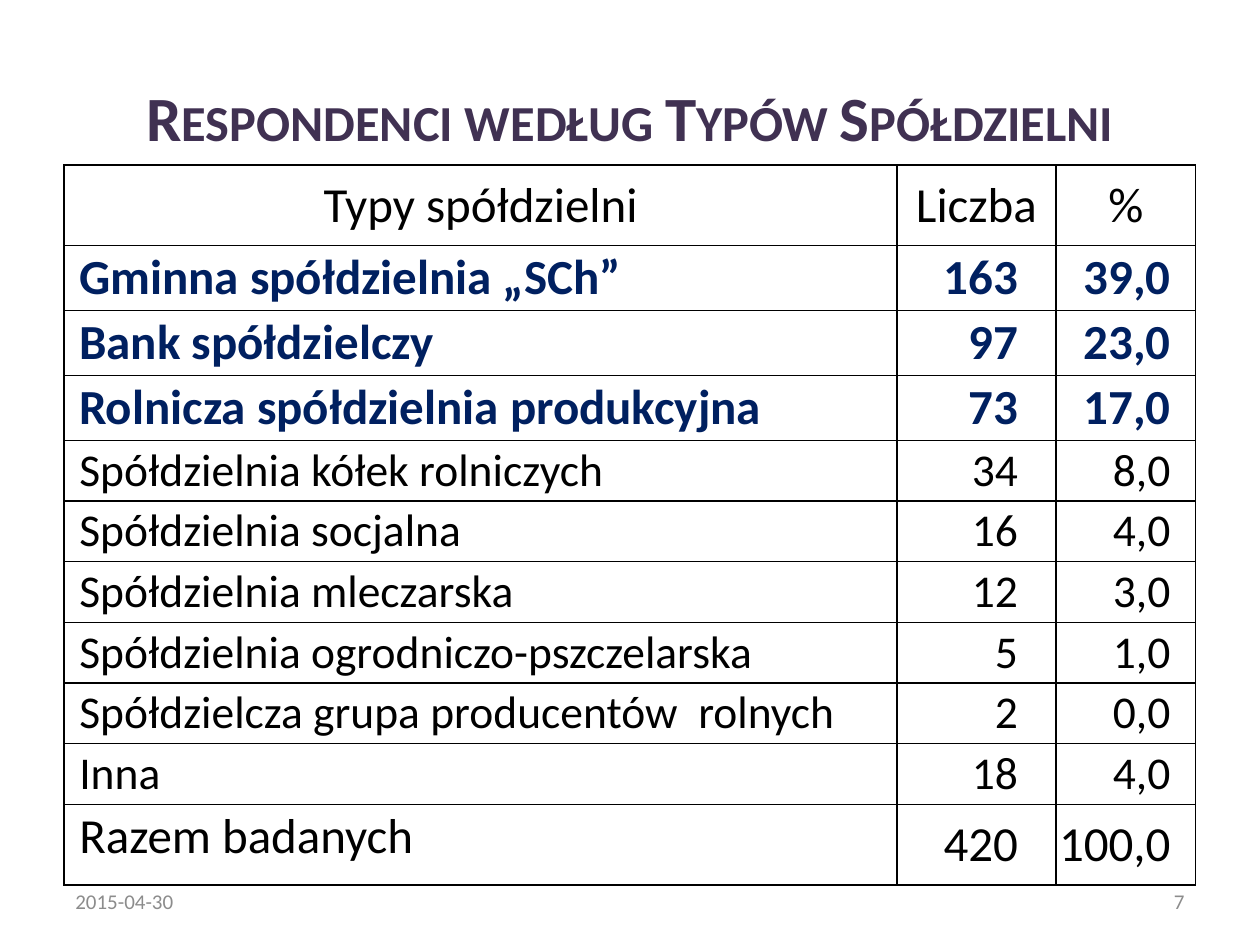
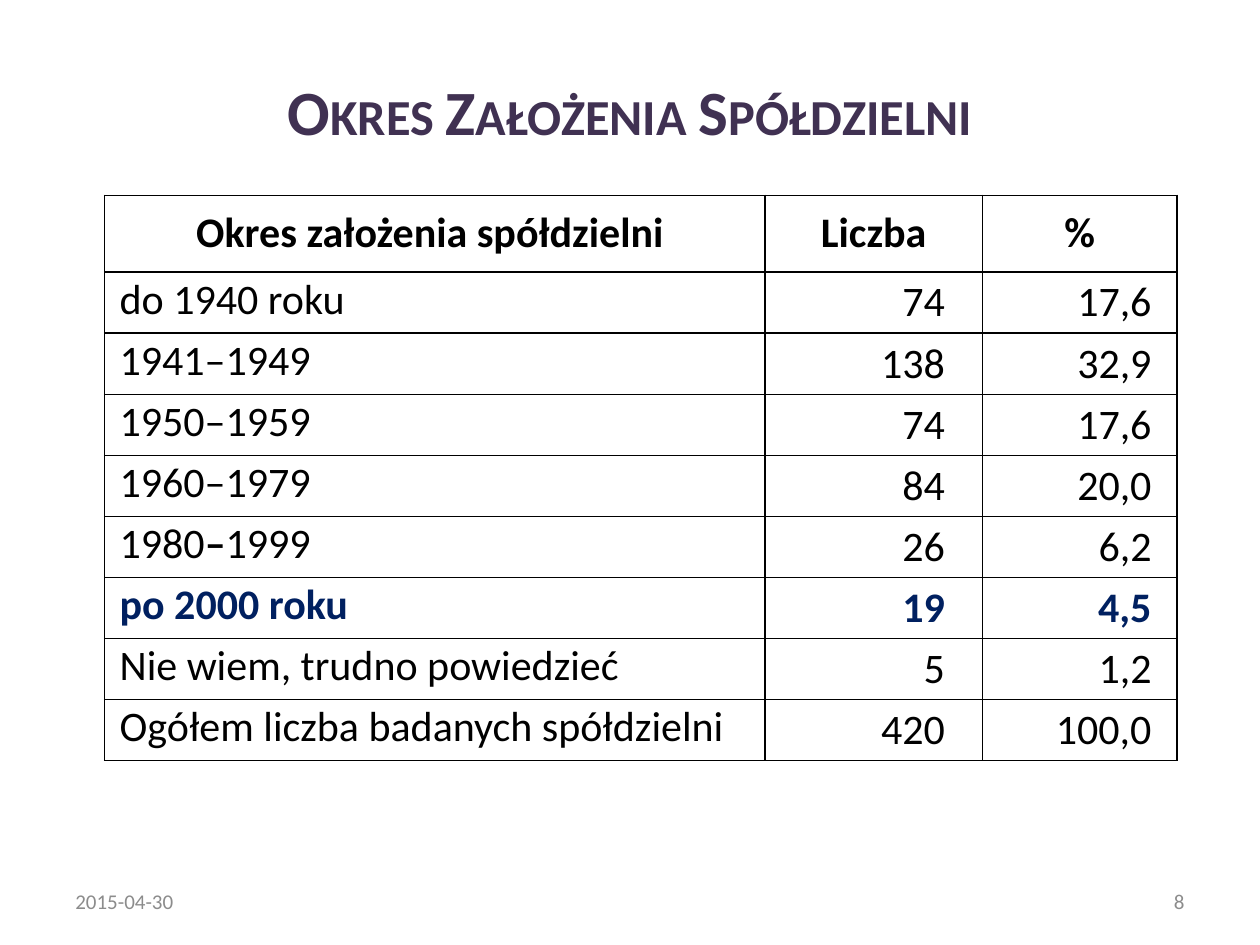
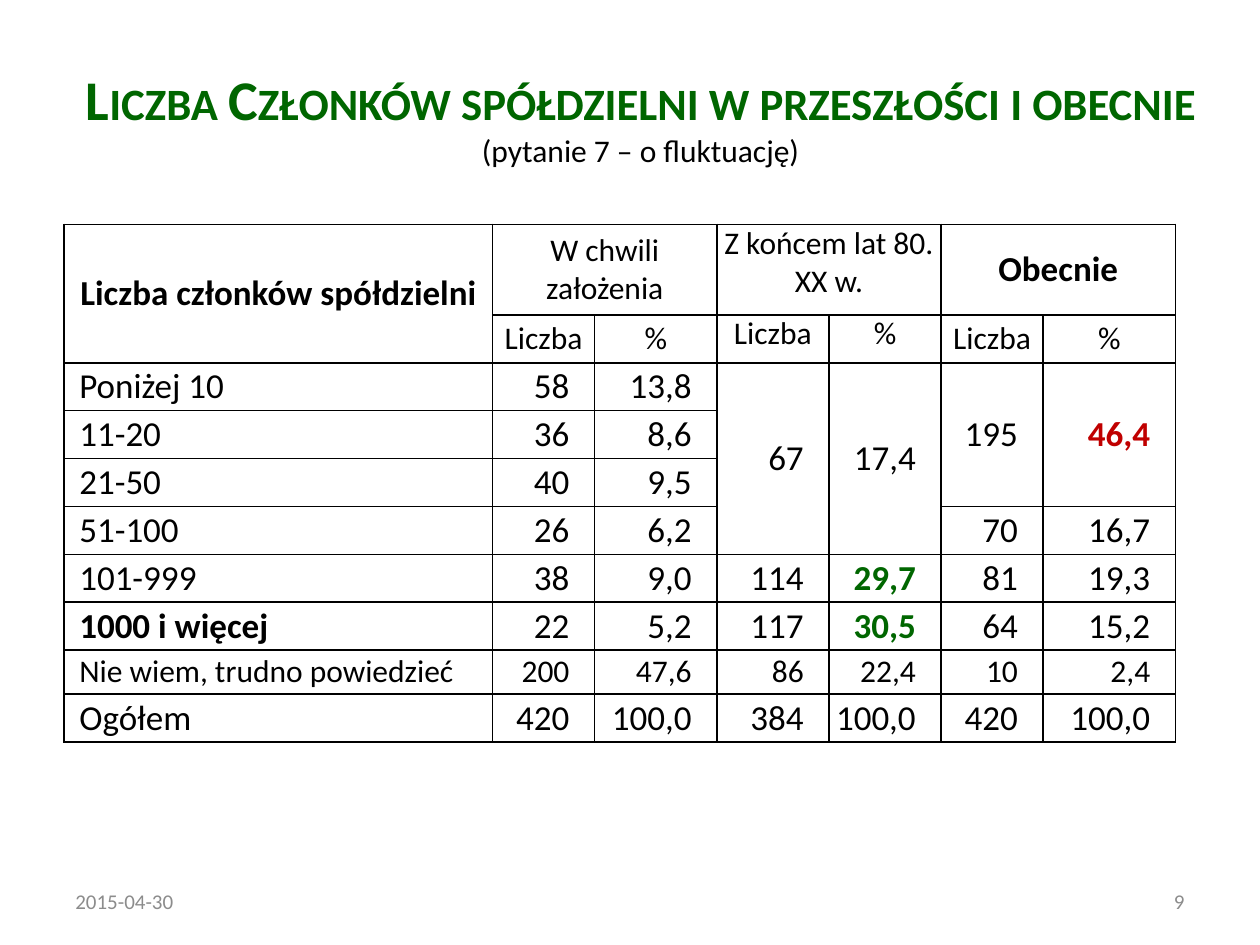
import pptx
import pptx.util
import pptx.dml.color
import pptx.enum.text
import pptx.oxml
import pptx.oxml.ns

Pt = pptx.util.Pt
ALIGN = pptx.enum.text.PP_ALIGN
ANCHOR = pptx.enum.text.MSO_ANCHOR
FONT = "Calibri"
BLACK, GREY, PLUM, NAVY, GREEN, RED = "000000", "8C8C8C", "403152", "002060", "006600", "C00000"


def color(value):
    return pptx.dml.color.RGBColor.from_string(value)


def write(para, text, ink=BLACK, small_caps=False, **look):
    span = para.add_run()
    span.text = text
    for name, value in ({"name": FONT, "bold": False} | look).items():
        setattr(span.font, name, value)
    span.font.color.rgb = color(ink)
    if small_caps:
        span.font._element.set("cap", "small")


deck = pptx.Presentation()
deck.slide_width, deck.slide_height = pptx.util.Inches(10), pptx.util.Inches(7.5)
column, row = deck.slide_width // 100, deck.slide_height // 75
inset = column // 5

strong = {"bold": True, "ink": NAVY, "size": Pt(28)}
green, red = ({"bold": True, "ink": ink} for ink in (GREEN, RED))
top_cell = {"vertical_anchor": ANCHOR.TOP, "margin_top": 0, "margin_bottom": 0}
column_heads = ["Liczba", "%"]

pages = [
    {
        "title": [("Respondenci według Typów Spółdzielni", 36, PLUM)],
        "title_box": (5, 3, 90, 12.5),
        "corner": (5.1, 13.1),
        "widths": [66.1, 12.6, 11.1],
        "heights": [6.4] + [4.9] * 3 + [4.6] * 6 + [6.4],
        "right_gaps": [0.2, 3, 2],
        "size": 26,
        "spacing": 0,
        "header_rows": 1,
        "looks": {0: {"size": Pt(28)}, 1: strong, 2: strong, 3: strong, 10: {"size": Pt(28)}},
        "cells": [
            ["Typy spółdzielni"] + column_heads,
            ["Gminna spółdzielnia „SCh”", "163", "39,0"],
            ["Bank spółdzielczy", "97", "23,0"],
            ["Rolnicza spółdzielnia produkcyjna", "73", "17,0"],
            ["Spółdzielnia kółek rolniczych", "34", "8,0"],
            ["Spółdzielnia socjalna", "16", "4,0"],
            ["Spółdzielnia mleczarska", "12", "3,0"],
            ["Spółdzielnia ogrodniczo-pszczelarska", "5", "1,0"],
            ["Spółdzielcza grupa producentów  rolnych", "2", "0,0"],
            ["Inna", "18", "4,0"],
            ["Razem badanych", "420", "100,0"],
        ],
    },
    {
        "title": [("Okres Założenia Spółdzielni", 36, PLUM)],
        "title_box": (5, 4.4, 90, 8.7),
        "corner": (8.3, 15.5),
        "widths": [52.4, 17.3, 15.4],
        "heights": [6.1] + [4.85] * 8,
        "right_gaps": [0.2, 3, 2],
        "size": 24,
        "spacing": 1,
        "header_rows": 1,
        "looks": {0: {"bold": True}, 6: strong | {"size": Pt(24)}},
        "cells": [
            ["Okres założenia spółdzielni "] + column_heads,
            ["do 1940 roku", "74", "17,6"],
            ["1941–1949", "138", "32,9"],
            ["1950–1959", "74", "17,6"],
            ["1960–1979", "84", "20,0"],
            ["1980*–*1999", "26", "6,2"],
            ["po 2000 roku", "19", "4,5"],
            ["Nie wiem, trudno powiedzieć", "5", "1,2"],
            ["Ogółem liczba badanych spółdzielni", "420", "100,0"],
        ],
    },
    {
        "title": [
            ("Liczba Członków spółdzielni w przeszłości i obecnie", 32, GREEN),
            ("(pytanie 7 – o fluktuację)", 18, BLACK),
        ],
        "title_box": (2.8, 3, 96.1, 12.5),
        "corner": (5.1, 17.8),
        "widths": [34, 8.1, 9.7, 8.9, 8.9, 8.1, 10.5],
        "heights": [7.2] + [3.8] * 7 + [3.5, 3.8],
        "right_gaps": [0.2] + [2] * 6,
        "size": 20,
        "spacing": 0,
        "header_rows": 2,
        "looks": {
            0: {"size": Pt(18)}, 1: {"size": Pt(18)}, 8: {"size": Pt(18)},
            (0, 0): {"size": Pt(20), "bold": True}, (0, 5): {"size": Pt(20), "bold": True},
            (2, 6): red, (6, 4): green, (7, 4): green, (7, 0): {"bold": True},
        },
        "top_cells": [(0, 3), (1, 3), (1, 4)],
        "spans": {
            (0, 0): (1, 0), (0, 1): (0, 2), (0, 3): (0, 4), (0, 5): (0, 6),
            (2, 3): (5, 3), (2, 4): (5, 4), (2, 5): (4, 5), (2, 6): (4, 6),
        },
        "cells": [
            ["Liczba członków spółdzielni", "W chwili założenia", "", "Z końcem lat 80. XX w.", "", "Obecnie", ""],
            [""] + column_heads * 3,
            ["Poniżej 10", "58", "13,8", "67", "17,4", "195", "46,4"],
            ["11-20", "36", "8,6", "", "", "", ""],
            ["21-50", "40", "9,5", "", "", "", ""],
            ["51-100", "26", "6,2", "", "", "70", "16,7"],
            ["101-999", "38", "9,0", "114", "29,7", "81", "19,3"],
            ["1000 i więcej", "22", "5,2", "117", "30,5", "64", "15,2"],
            ["Nie wiem, trudno powiedzieć", "200", "47,6", "86", "22,4", "10", "2,4"],
            ["Ogółem", "420", "100,0", "384", "100,0", "420", "100,0"],
        ],
    },
]

for number, content in enumerate(pages, start=7):
    page = deck.slides.add_slide(deck.slide_layouts[5])

    title = page.shapes.title
    left, top, width, height = content["title_box"]
    frame_place = {"left": left * column, "top": top * row, "width": width * column, "height": height * row}
    for name, value in frame_place.items():
        setattr(title, name, int(value))
    frame = title.text_frame
    frame.auto_size = pptx.enum.text.MSO_AUTO_SIZE.NONE
    frame.vertical_anchor = ANCHOR.MIDDLE
    para = frame.paragraphs[0]
    para.alignment = ALIGN.CENTER
    for index, (text, size, ink) in enumerate(content["title"]):
        if index:
            para.add_line_break()
        write(para, text, ink, small_caps=index == 0, size=Pt(size), bold=index == 0)

    widths = [int(value * column) for value in content["widths"]]
    heights = [int(value * row) for value in content["heights"]]
    left, top = content["corner"]
    table = page.shapes.add_table(
        len(heights), len(widths), int(left * column), int(top * row), sum(widths), sum(heights)
    ).table
    table.first_row = table.horz_banding = False
    for line, value in zip(table.columns, widths):
        line.width = value
    for line, value in zip(table.rows, heights):
        line.height = value

    looks = content["looks"]
    for r, texts in enumerate(content["cells"]):
        for c, text in enumerate(texts):
            cell = table.cell(r, c)
            header, label = r < content["header_rows"], c == 0
            layout = {
                "margin_left": inset * 6 if label and not header else inset,
                "margin_right": inset if header else int(content["right_gaps"][c] * column),
                "margin_top": inset,
                "margin_bottom": inset,
                "vertical_anchor": ANCHOR.TOP if label and not header else ANCHOR.MIDDLE,
            }
            if (r, c) in content.get("top_cells", []):
                layout |= top_cell
            for name, value in layout.items():
                setattr(cell, name, value)
            properties = cell._tc.get_or_add_tcPr()
            for side in "LRTB":
                properties.append(pptx.oxml.parse_xml(
                    f'<a:ln{side} {pptx.oxml.ns.nsdecls("a")} w="12700"><a:solidFill>'
                    f'<a:srgbClr val="{BLACK}"/></a:solidFill></a:ln{side}>'
                ))
            cell.fill.background()
            if not text:
                continue
            para = cell.text_frame.paragraphs[0]
            para.alignment = ALIGN.CENTER if header else ALIGN.LEFT if label else ALIGN.RIGHT
            para.space_before = para.space_after = Pt(content["spacing"])
            look = {"size": Pt(content["size"])} | looks.get(r, {}) | looks.get((r, c), {})
            for index, part in enumerate(text.split("*")):
                write(para, part, **(look | ({"bold": True} if index % 2 else {})))
    for first, last in content.get("spans", {}).items():
        table.cell(*first).merge(table.cell(*last))

    for text, left, align in (("2015-04-30", 5, ALIGN.LEFT), (str(number), 71.7, ALIGN.RIGHT)):
        box = page.shapes.add_textbox(int(left * column), int(69.5 * row), int(23.3 * column), 4 * row)
        box.text_frame.word_wrap = True
        box.text_frame.vertical_anchor = ANCHOR.MIDDLE
        para = box.text_frame.paragraphs[0]
        para.alignment = align
        write(para, text, GREY, size=Pt(12))

deck.save("out.pptx")
